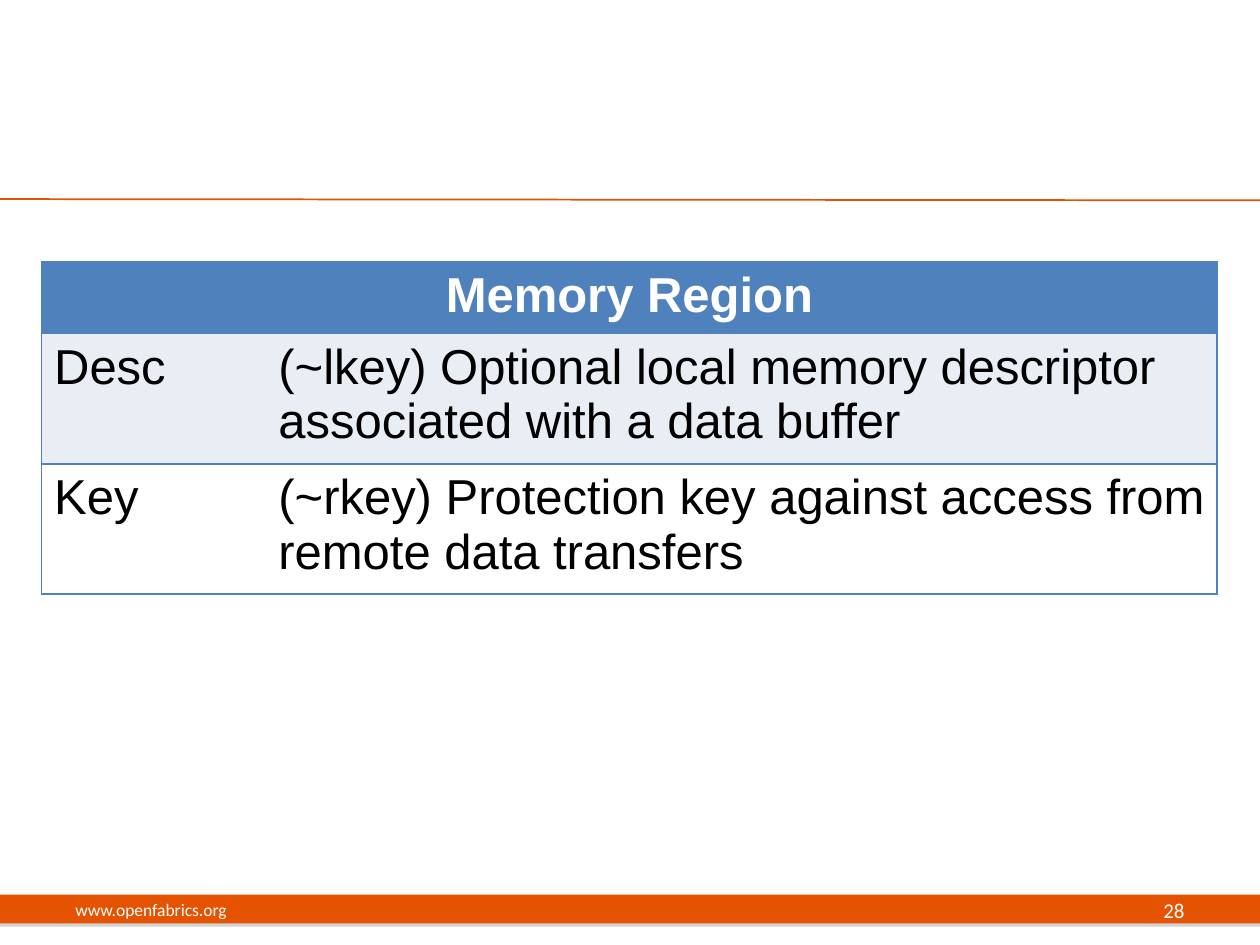
from lxml.etree import SubElement
from pptx import Presentation
from pptx.dml.color import RGBColor
from pptx.enum.shapes import MSO_CONNECTOR, MSO_SHAPE
from pptx.enum.text import MSO_ANCHOR, PP_ALIGN
from pptx.oxml import parse_xml
from pptx.oxml.ns import nsdecls, qn
from pptx.util import Inches, Pt

ORANGE = RGBColor(0xE5, 0x53, 0x02)
BLUE = RGBColor(0x4F, 0x81, 0xBD)
PALE_BLUE = RGBColor(0xE9, 0xED, 0xF4)
WHITE = RGBColor(0xFF, 0xFF, 0xFF)
BLACK = RGBColor(0, 0, 0)
SHADOW = RGBColor(0x80, 0x80, 0x80)

TITLE = "Memory Region"
ENTRIES = [
    ("Desc", "(~lkey) Optional local memory descriptor associated with a data buffer"),
    ("Key", "(~rkey) Protection key against access from remote data transfers"),
]


def format_text(paragraph, font_name, size, color, alignment, bold=False):
    paragraph.alignment = alignment
    font = paragraph.runs[0].font
    font.name = font_name
    font.size = Pt(size)
    font.bold = bold
    font.color.rgb = color


def add_title_rule(slide, left, top, width):
    rule = slide.shapes.add_connector(
        MSO_CONNECTOR.STRAIGHT, left, top, left + width, top + Inches(0.01))
    rule.line.color.rgb = ORANGE
    rule.line.width = Pt(1)
    SubElement(rule.element.spPr, qn("a:effectLst"))


def add_label(slide, text, size, alignment, left, top, width, height):
    label = slide.shapes.add_textbox(left, top, width, height)
    frame = label.text_frame
    frame.word_wrap = True
    frame.vertical_anchor = MSO_ANCHOR.MIDDLE
    frame.text = text
    format_text(frame.paragraphs[0], "Calibri", size, WHITE, alignment)


def add_footer(slide, left, top, width, height):
    bar = slide.shapes.add_shape(
        MSO_SHAPE.RECTANGLE, left, top + Inches(0.08), width, Inches(0.23))
    bar.fill.solid()
    bar.fill.fore_color.rgb = ORANGE
    bar.line.fill.background()
    bar.element.spPr.append(parse_xml(
        f'<a:effectLst {nsdecls("a")}>'
        f'<a:outerShdw blurRad="0" dist="{Pt(1.8)}" dir="5400000" rotWithShape="0">'
        f'<a:srgbClr val="{SHADOW}"><a:alpha val="35000"/></a:srgbClr>'
        '</a:outerShdw></a:effectLst>'))
    margin = Inches(0.5)
    number_width = Inches(2.33)
    add_label(slide, "www.openfabrics.org", 10, PP_ALIGN.LEFT,
              left + margin, top, Inches(3.17), height)
    add_label(slide, "28", 12, PP_ALIGN.RIGHT,
              left + width - margin - number_width, top, number_width, height)


def set_borders(cell, visible_sides):
    properties = cell._tc.get_or_add_tcPr()
    for index, side in enumerate("LRTB"):
        if side in visible_sides:
            fill = f'<a:solidFill><a:srgbClr val="{BLUE}"/></a:solidFill>'
        else:
            fill = "<a:noFill/>"
        properties.insert(index, parse_xml(
            f'<a:ln{side} {nsdecls("a")} w="{Pt(1)}">{fill}</a:ln{side}>'))


def style_cell(cell, fill_color, visible_sides):
    cell.fill.solid()
    cell.fill.fore_color.rgb = fill_color
    set_borders(cell, visible_sides)


def add_memory_table(slide, left, top, width, height):
    table = slide.shapes.add_table(
        len(ENTRIES) + 1, 2, left, top, width, height).table
    name_width = Inches(1.78)
    header_height = Inches(0.54)
    table.columns[0].width = name_width
    table.columns[1].width = width - name_width
    table.rows[0].height = header_height

    header = table.cell(0, 0)
    header.merge(table.cell(0, 1))
    header.text_frame.text = TITLE
    format_text(header.text_frame.paragraphs[0], "Arial", 28, WHITE,
                PP_ALIGN.CENTER, True)
    for column in range(2):
        style_cell(table.cell(0, column), BLUE, "LRTB")

    for row, entry in enumerate(ENTRIES, 1):
        table.rows[row].height = (height - header_height) // len(ENTRIES)
        row_color = PALE_BLUE if row % 2 else WHITE
        for column, (text, sides) in enumerate(zip(entry, ("LTB", "RTB"))):
            cell = table.cell(row, column)
            cell.text_frame.text = text
            format_text(cell.text_frame.paragraphs[0], "Arial", 28, BLACK,
                        PP_ALIGN.LEFT)
            style_cell(cell, row_color, sides)


def main():
    presentation = Presentation()
    presentation.slide_width = Inches(10)
    presentation.slide_height = Inches(7.5)
    slide = presentation.slides.add_slide(presentation.slide_layouts[6])
    add_title_rule(slide, Inches(0), Inches(1.58), presentation.slide_width)
    add_footer(slide, Inches(0), Inches(7.02), presentation.slide_width, Inches(0.4))
    add_memory_table(slide, Inches(0.33), Inches(2.08), Inches(9.33), Inches(2.46))
    presentation.save("out.pptx")


if __name__ == "__main__":
    main()
